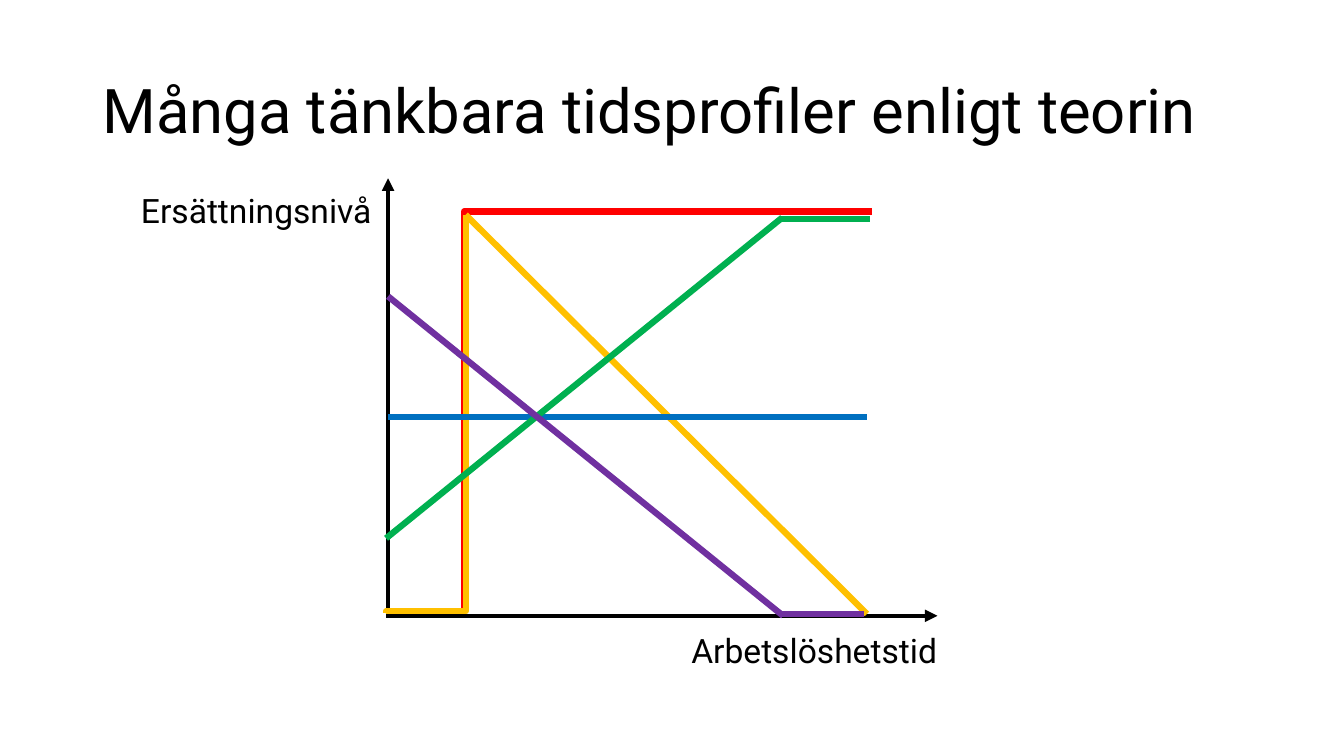
import pptx
import pptx.util
import pptx.dml.color
import pptx.enum.shapes
import pptx.enum.text
import pptx.oxml
import pptx.oxml.ns

Pt = pptx.util.Pt
RGB = pptx.dml.color.RGBColor.from_string
qn = pptx.oxml.ns.qn
Link = pptx.enum.shapes.MSO_CONNECTOR
Anchor = pptx.enum.text.MSO_ANCHOR
Align = pptx.enum.text.PP_ALIGN
Fit = pptx.enum.text.MSO_AUTO_SIZE

hues = {
    "black": "000000", "red": "FF0000", "gold": "FFC000",
    "blue": "0070C0", "green": "00B050", "purple": "7030A0",
}

deck = pptx.Presentation()
deck.slide_width, deck.slide_height = Pt(960), Pt(540)
slide = deck.slides.add_slide(deck.slide_layouts[5])


def write(box, text, size):
    frame = box.text_frame
    frame.text = text
    frame.word_wrap = True
    para = frame.paragraphs[0]
    para.alignment = Align.LEFT
    para.font.name = "Roboto"
    para.font.size = Pt(size)
    para.font.color.rgb = RGB(hues["black"])


def draw(hue, width, ends, kind=Link.STRAIGHT):
    line = slide.shapes.add_connector(kind, *[Pt(n) for n in ends])
    line.line.color.rgb = RGB(hues[hue])
    line.line.width = Pt(width)
    props = line._element.spPr
    props.append(props.makeelement(qn("a:effectLst"), {}))
    return props


# Title
title = slide.shapes.title
title.left, title.top, title.width, title.height = Pt(66), Pt(28.8), Pt(828), Pt(104.4)
write(title, "Många tänkbara tidsprofiler enligt teorin", 44)
title.text_frame.auto_size = Fit.NONE
title.text_frame.vertical_anchor = Anchor.MIDDLE
title.text_frame.paragraphs[0].line_spacing = 0.9

# Axes with arrowheads
for ends in [(275.8, 439.9, 669.6, 439.9), (277.2, 439.9, 277.2, 127.4)]:
    props = draw("black", 3, ends)
    edge = props.find(qn("a:ln"))
    edge.append(edge.makeelement(qn("a:tailEnd"), {"type": "triangle"}))

# Stepped profiles: colour, ends, bend position, turn (60000ths of a degree)
steps = [
    ("red", (277.2, 436.3, 622.8, 151.2), 15700, 0),
    ("gold", (446.4, 324, 162, 267.1), 400, 5400000),
]
for hue, ends, bend, turn in steps:
    props = draw(hue, 4.5, ends, Link.ELBOW)
    props.find(qn("a:xfrm")).set("rot", str(turn))
    guides = props.find(qn("a:prstGeom")).find(qn("a:avLst"))
    guides.append(guides.makeelement(qn("a:gd"), {"name": "adj1", "fmla": f"val {bend}"}))

# Straight parts of the profiles
parts = [
    ("gold", (332.6, 153.4, 619.2, 438.5)),
    ("blue", (277.2, 298.1, 619.2, 298.1)),
    ("green", (275.8, 384.5, 558.7, 155.5)),
    ("green", (557.3, 156.2, 621.4, 156.2)),
    ("purple", (277.2, 211.7, 559.4, 439.9)),
    ("purple", (557.3, 438.5, 617, 438.5)),
]
for hue, ends in parts:
    draw(hue, 4.5, ends)

# Axis labels
labels = [
    ("Arbetslöshetstid", 486.7, 446.4, 223.9),
    ("Ersättningsnivå", 93.6, 131.8, 203),
]
for text, left, top, width in labels:
    box = slide.shapes.add_textbox(Pt(left), Pt(top), Pt(width), Pt(36))
    write(box, text, 24)
    box.text_frame.auto_size = Fit.SHAPE_TO_FIT_TEXT

deck.save("out.pptx")
